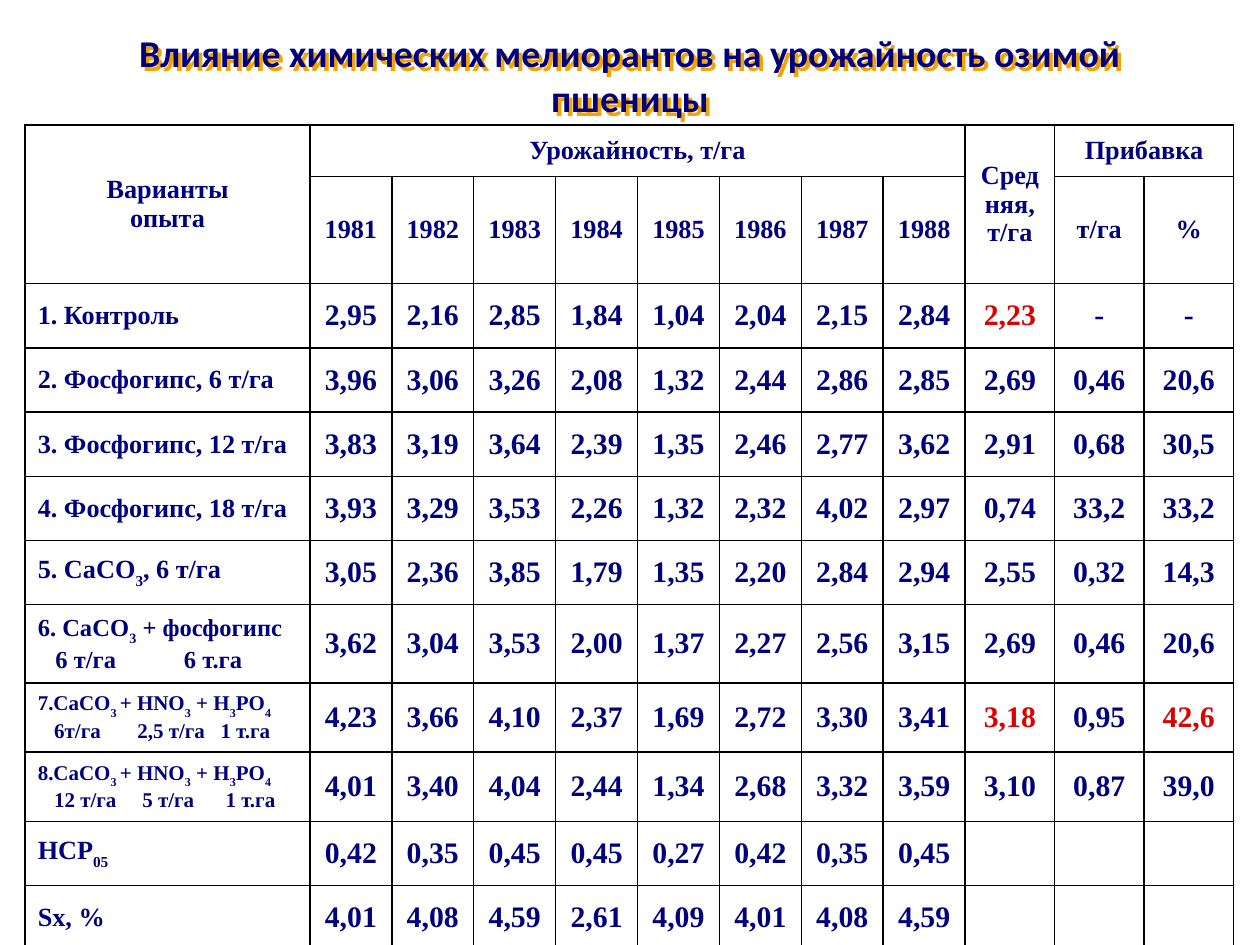
"""Build a slide with a table of winter wheat yields."""
from pptx import Presentation
from pptx.dml.color import RGBColor
from pptx.enum.text import MSO_ANCHOR, PP_ALIGN
from pptx.oxml import parse_xml
from pptx.oxml.ns import nsdecls
from pptx.util import Inches, Pt

NAVY = RGBColor(0x00, 0x00, 0x7E)
RED = RGBColor(0xDC, 0x00, 0x00)
BLACK = RGBColor(0x00, 0x00, 0x00)
ORANGE = RGBColor(0xF5, 0xA3, 0x00)
SERIF = "Times New Roman"

TITLE = "Влияние химических мелиорантов на урожайность озимой пшеницы"
WIDTHS = [2.26] + [0.65] * 8 + [0.71] * 3
HEIGHTS = [0.41, 0.58] + [0.51] * 5 + [0.62] + [0.55] * 2 + [0.51] * 2
HEADS = [
    (0, 0, 1, 0, "Варианты\nопыта"),
    (0, 1, 0, 8, "Урожайность, т/га"),
    (0, 9, 1, 9, "Средняя,\nт/га"),
    (0, 10, 0, 11, "Прибавка"),
]
UNITS = {10: "т/га", 11: "%"}
ACID = "СаСО_3 _+ HNO_3_ + H_3_PO_4_"
ROWS = [
    ("1. Контроль", 15, (), "2,95 2,16 2,85 1,84 1,04 2,04 2,15 2,84 2,23 - -"),
    ("2. Фосфогипс, 6 т/га", 15, (),
     "3,96 3,06 3,26 2,08 1,32 2,44 2,86 2,85 2,69 0,46 20,6"),
    ("3. Фосфогипс, 12 т/га", 15, (),
     "3,83 3,19 3,64 2,39 1,35 2,46 2,77 3,62 2,91 0,68 30,5"),
    ("4. Фосфогипс, 18 т/га", 15, (),
     "3,93 3,29 3,53 2,26 1,32 2,32 4,02 2,97 0,74 33,2 33,2"),
    ("5. СаСО_3_, 6 т/га", 15, (),
     "3,05 2,36 3,85 1,79 1,35 2,20 2,84 2,94 2,55 0,32 14,3"),
    ("6. СаСО_3_ + фосфогипс\n\t6 т/га\t6 т.га", 14, (0.14, 1.16),
     "3,62 3,04 3,53 2,00 1,37 2,27 2,56 3,15 2,69 0,46 20,6"),
    (f"7.{ACID}\n\t6т/га\t2,5 т/га\t1 т.га", 12, (0.13, 0.79, 1.45),
     "4,23 3,66 4,10 2,37 1,69 2,72 3,30 3,41 3,18 0,95 42,6"),
    (f"8.{ACID}\n\t12 т/га\t5 т/га\t1 т.га", 12, (0.13, 0.83, 1.49),
     "4,01 3,40 4,04 2,44 1,34 2,68 3,32 3,59 3,10 0,87 39,0"),
    ("НСР_05_", 15, (), "0,42 0,35 0,45 0,45 0,27 0,42 0,35 0,45"),
    ("Sx, %", 15, (), "4,01 4,08 4,59 2,61 4,09 4,01 4,08 4,59"),
]
ACCENTS = {(2, 9), (8, 9), (8, 11)}


def set_tabs(para, stops):
    """Give a paragraph left tab stops at the given inches."""
    tabs = "".join(f'<a:tab pos="{Inches(stop)}" algn="l"/>' for stop in stops)
    para._p.get_or_add_pPr().append(
        parse_xml(f'<a:tabLst {nsdecls("a")}>{tabs}</a:tabLst>'))


def write(frame, text, size=15, font=SERIF, color=NAVY,
          align=PP_ALIGN.CENTER, stops=()):
    """Write bold lines, with subscripts held between underscores."""
    for index, line in enumerate(text.split("\n")):
        para = frame.add_paragraph() if index else frame.paragraphs[0]
        para.alignment = align
        if stops and "\t" in line:
            set_tabs(para, stops)
        for part, piece in enumerate(line.split("_")):
            if not piece:
                continue
            run = para.add_run()
            run.text = piece
            run.font.size = Pt(size)
            run.font.name = font
            run.font.bold = True
            run.font.color.rgb = color
            if part % 2:
                run.font._element.set("baseline", "-30000")


def add_title(slide):
    """Add the title with its orange shadow."""
    box = slide.shapes.add_textbox(
        Inches(0.5), Inches(0.3), Inches(9), Inches(0.59))
    frame = box.text_frame
    frame.word_wrap = True
    frame.vertical_anchor = MSO_ANCHOR.MIDDLE
    write(frame, TITLE, size=21.6, font="Calibri")
    box._element.spPr.append(parse_xml(
        f'<a:effectLst {nsdecls("a")}><a:outerShdw dist="{Inches(0.04)}" '
        f'dir="2700000" algn="ctr"><a:srgbClr val="{ORANGE}"/>'
        '</a:outerShdw></a:effectLst>'))


def style(cell):
    """Give a cell black edges, no fill and middle anchoring."""
    props = cell._tc.get_or_add_tcPr()
    for side in "LRTB":
        props.append(parse_xml(
            f'<a:ln{side} {nsdecls("a")} w="{Pt(1)}"><a:solidFill>'
            f'<a:srgbClr val="{BLACK}"/></a:solidFill></a:ln{side}>'))
    cell.fill.background()
    cell.vertical_anchor = MSO_ANCHOR.MIDDLE


def add_grid(slide):
    """Add the empty table with its column and row sizes."""
    frame = slide.shapes.add_table(
        len(HEIGHTS), len(WIDTHS), Inches(0.2), Inches(0.99),
        Inches(9.6), Inches(6.3))
    table = frame.table
    table.first_row = table.horz_banding = False
    for column, width in zip(table.columns, WIDTHS):
        column.width = Inches(width)
    for row, height in zip(table.rows, HEIGHTS):
        row.height = Inches(height)
    for cell in table.iter_cells():
        style(cell)
    return table


def fill_heads(table):
    """Merge and write the two heading rows."""
    for top, left, bottom, right, text in HEADS:
        cell = table.cell(top, left)
        cell.merge(table.cell(bottom, right))
        write(cell.text_frame, text)
    years = {col: str(1980 + col) for col in range(1, 9)}
    for col, text in (years | UNITS).items():
        write(table.cell(1, col).text_frame, text)


def fill_rows(table):
    """Write the variants and their values."""
    for row, (label, size, stops, values) in enumerate(ROWS, 2):
        write(table.cell(row, 0).text_frame, label, size=size,
              align=PP_ALIGN.JUSTIFY, stops=stops)
        for col, value in enumerate(values.split(), 1):
            color = RED if (row, col) in ACCENTS else NAVY
            write(table.cell(row, col).text_frame, value, size=17, color=color)


def main():
    """Build and save the slide."""
    deck = Presentation()
    deck.slide_width, deck.slide_height = Inches(10), Inches(7.5)
    slide = deck.slides.add_slide(deck.slide_layouts[6])
    add_title(slide)
    table = add_grid(slide)
    fill_heads(table)
    fill_rows(table)
    deck.save("out.pptx")


if __name__ == "__main__":
    main()
